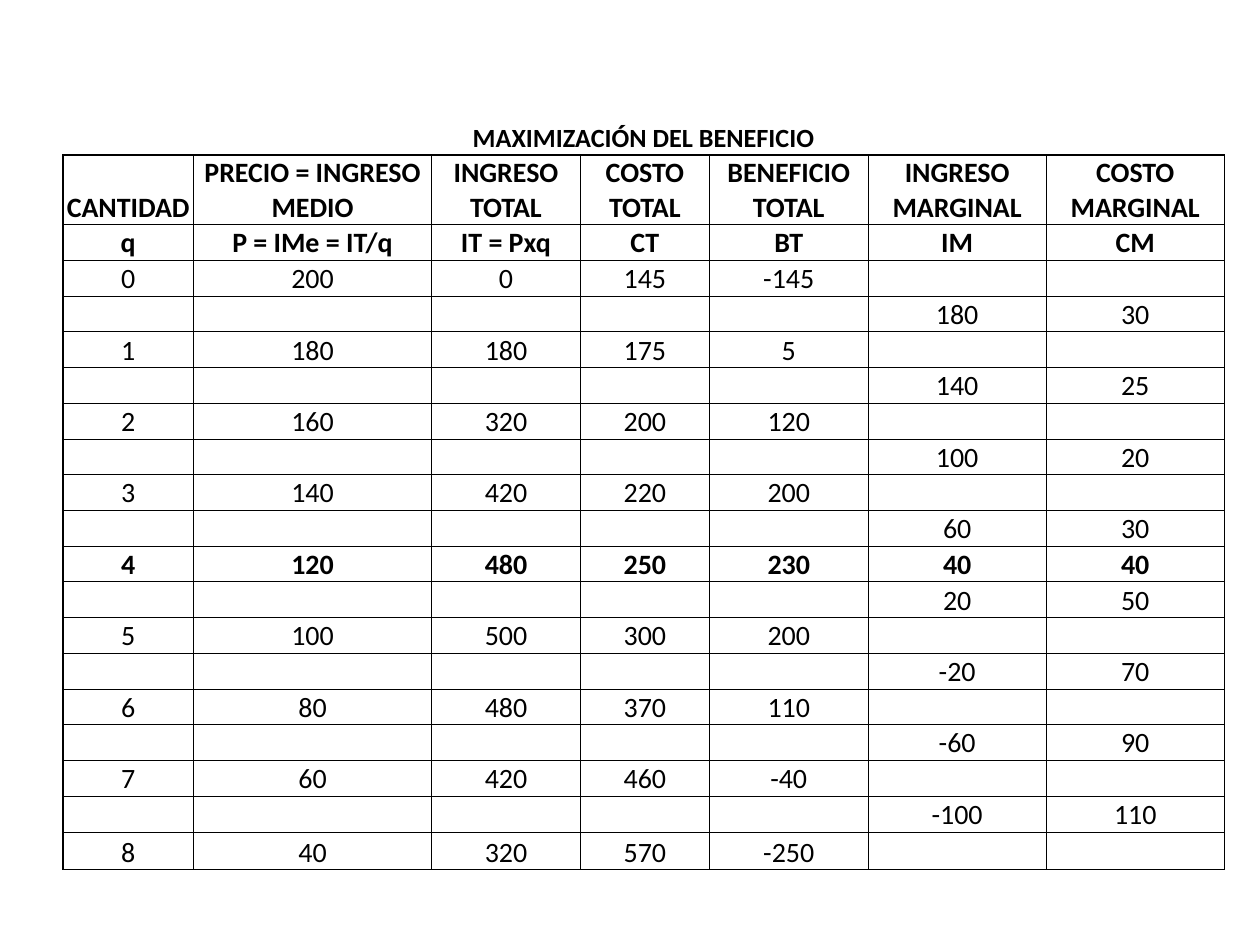
from lxml.etree import SubElement
from pptx import Presentation
from pptx.dml.color import RGBColor
from pptx.enum.text import MSO_ANCHOR, PP_ALIGN
from pptx.oxml import parse_xml
from pptx.oxml.ns import nsdecls, qn
from pptx.util import Cm, Pt

COLORS = {"ink": "000000"}
FONT = "Calibri"
THIN, THICK = 0.5, 1

TITLE = "MAXIMIZACIÓN DEL BENEFICIO"
HEADINGS = ["CANTIDAD", "PRECIO = INGRESO MEDIO", "INGRESO TOTAL", "COSTO TOTAL",
            "BENEFICIO TOTAL", "INGRESO MARGINAL", "COSTO MARGINAL"]
SYMBOLS = ["q", "P = IMe = IT/q", "IT = Pxq", "CT", "BT", "IM", "CM"]
PRICES = [200, 180, 160, 140, 120, 100, 80, 60, 40]
COSTS = [145, 175, 200, 220, 250, 300, 370, 460, 570]
OPTIMUM = 4

COLUMN_WIDTHS = [2.63, 4.8, 3, 2.6, 3.2, 3.59, 3.59]
TITLE_HEIGHT, HEADING_HEIGHT, ROW_HEIGHT, LAST_HEIGHT = 0.99, 1.41, 0.72, 0.76


def profit_rows():
    """Totals for each quantity, with the marginal values in the rows between."""
    incomes = [price * quantity for quantity, price in enumerate(PRICES)]
    marginals = [(incomes[i + 1] - incomes[i], COSTS[i + 1] - COSTS[i])
                 for i in range(len(COSTS) - 1)]
    rows = []
    for quantity, (price, income, cost) in enumerate(zip(PRICES, incomes, COSTS)):
        middle = ["", ""]
        if quantity == OPTIMUM:
            pairs = zip(marginals[quantity - 1], marginals[quantity])
            middle = [(before + after) // 2 for before, after in pairs]
        rows.append([quantity, price, income, cost, income - cost, *middle])
        if quantity < len(marginals):
            rows.append([""] * 5 + list(marginals[quantity]))
    return rows


def write_text(cell, text, size=16, bold=False):
    cell.fill.background()
    cell.vertical_anchor = MSO_ANCHOR.BOTTOM
    cell.margin_left = cell.margin_right = cell.margin_top = Cm(0.02)
    cell.margin_bottom = 0
    para = cell.text_frame.paragraphs[0]
    para.alignment = PP_ALIGN.CENTER
    if text == "":
        # An empty cell keeps the text size, so that its row does not grow
        SubElement(para._p, qn("a:endParaRPr"), sz=str(size * 100))
        return
    span = para.add_run()
    span.text = str(text)
    span.font.name, span.font.size, span.font.bold = FONT, Pt(size), bold
    span.font.color.rgb = RGBColor.from_string(COLORS["ink"])


def set_borders(cell, left, right, top, bottom):
    properties = cell._tc.get_or_add_tcPr()
    for place, (side, width) in enumerate(zip("LRTB", (left, right, top, bottom))):
        paint = (f'<a:solidFill><a:srgbClr val="{COLORS["ink"]}"/></a:solidFill>'
                 if width else "<a:noFill/>")
        properties.insert(place, parse_xml(
            f'<a:ln{side} {nsdecls("a")} w="{Pt(width)}">{paint}</a:ln{side}>'))


def add_profit_table(page, left, top):
    rows = [[TITLE] + [""] * 6, HEADINGS, SYMBOLS] + profit_rows()
    heights = [TITLE_HEIGHT, HEADING_HEIGHT] + [ROW_HEIGHT] * (len(rows) - 3) + [LAST_HEIGHT]
    last_row, last_column = len(rows) - 1, len(HEADINGS) - 1
    table = page.shapes.add_table(len(rows), len(HEADINGS), Cm(left), Cm(top),
                                  Cm(sum(COLUMN_WIDTHS)), Cm(sum(heights))).table
    table.first_row = table.horz_banding = False
    for column, width in zip(table.columns, COLUMN_WIDTHS):
        column.width = Cm(width)
    for row, height in zip(table.rows, heights):
        row.height = Cm(height)

    # Title across all columns
    table.cell(0, 0).merge(table.cell(0, last_column))

    for i, values in enumerate(rows):
        for j, value in enumerate(values):
            cell = table.cell(i, j)
            bold = i < 3 or values[0] == OPTIMUM
            write_text(cell, value, size=15 if i == 0 else 16, bold=bold)
            if i == 0:
                set_borders(cell, 0, 0, 0, THICK)
            else:
                set_borders(cell,
                            THICK if j == 0 else THIN,
                            THICK if j == last_column else THIN,
                            THICK if i == 1 else THIN,
                            THICK if i == last_row else THIN)


def main():
    deck = Presentation()
    deck.slide_width, deck.slide_height = Cm(25.4), Cm(19.05)
    page = deck.slides.add_slide(deck.slide_layouts[6])
    add_profit_table(page, left=1.27, top=2.13)
    deck.save("out.pptx")


if __name__ == "__main__":
    main()
